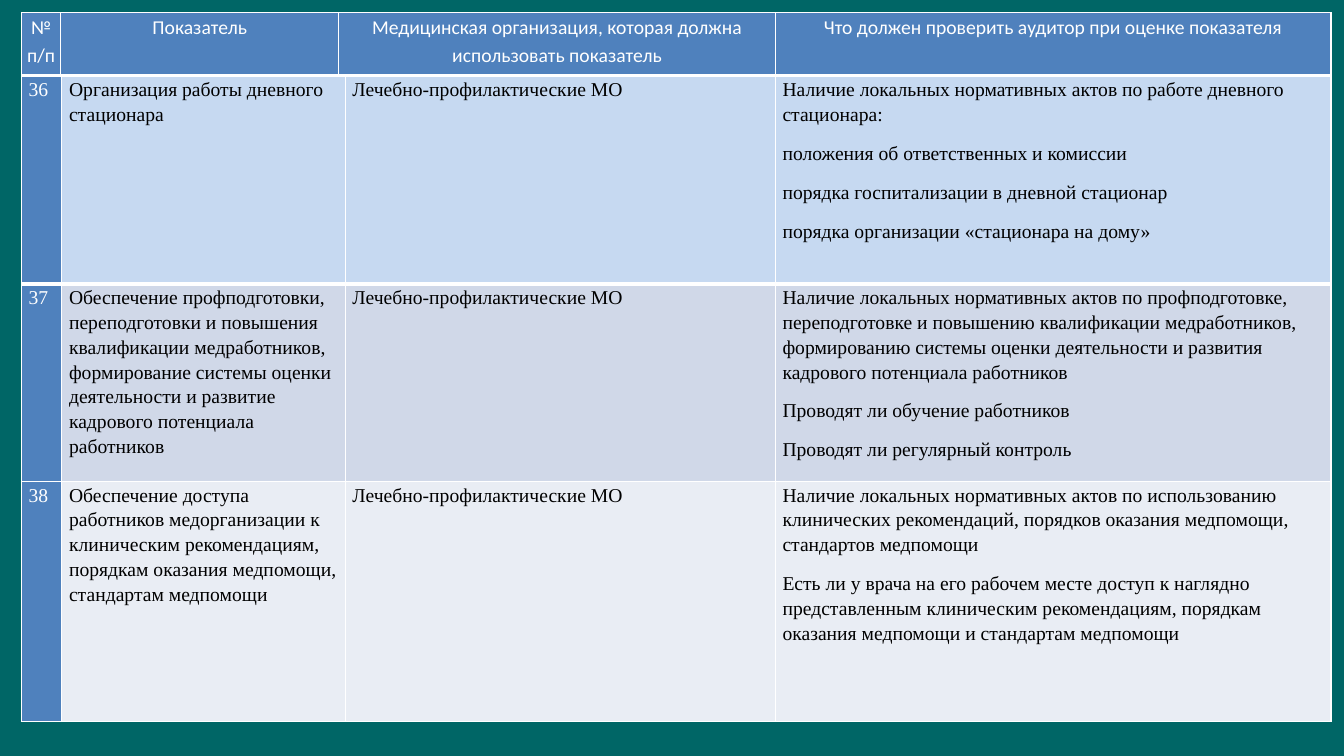
from dataclasses import dataclass

from lxml import etree
from pptx import Presentation
from pptx import util as u
from pptx.dml.color import RGBColor
from pptx.enum import text
from pptx.oxml.ns import qn


@dataclass(frozen=True)
class Theme:
    back: str = "006666"
    head: str = "4F81BD"
    light: str = "FFFFFF"
    dark: str = "000000"
    bands: tuple = ("C6D9F1", "D0D8E8", "E9EDF4")
    sans: str = "Calibri"
    serif: str = "Times New Roman"
    size: int = 14
    thin: int = 1
    thick: int = 3


THEME = Theme()
CLINIC = "Лечебно-профилактические МО"
HEADS = (
    "№ п/п",
    "Показатель",
    "Медицинская организация, которая должна использовать показатель",
    "Что должен проверить аудитор при оценке показателя",
)
ITEMS = (
    (
        "36",
        "Организация работы дневного стационара",
        CLINIC,
        "Наличие локальных нормативных актов по работе дневного стационара:\n"
        "положения об ответственных и комиссии\n"
        "порядка госпитализации в дневной стационар\n"
        "порядка организации «стационара на дому»",
    ),
    (
        "37",
        "Обеспечение профподготовки, переподготовки и повышения квалификации "
        "медработников, формирование системы оценки деятельности и развитие "
        "кадрового потенциала работников",
        CLINIC,
        "Наличие локальных нормативных актов по профподготовке, переподготовке "
        "и повышению квалификации медработников, формированию системы оценки "
        "деятельности и развития кадрового потенциала работников\n"
        "Проводят ли обучение работников\n"
        "Проводят ли регулярный контроль",
    ),
    (
        "38",
        "Обеспечение доступа работников медорганизации к клиническим "
        "рекомендациям, порядкам оказания медпомощи, стандартам медпомощи",
        CLINIC,
        "Наличие локальных нормативных актов по использованию клинических "
        "рекомендаций, порядков оказания медпомощи, стандартов медпомощи\n"
        "Есть ли у врача на его рабочем месте доступ к наглядно представленным "
        "клиническим рекомендациям, порядкам оказания медпомощи и стандартам "
        "медпомощи",
    ),
)


def edge(cell, base):
    props = cell._tc.get_or_add_tcPr()
    for side in ("lnL", "lnR", "lnT", "lnB"):
        width = base if side == "lnB" else THEME.thin
        line = etree.SubElement(props, qn(f"a:{side}"), w=str(u.Pt(width)))
        fill = etree.SubElement(line, qn("a:solidFill"))
        etree.SubElement(fill, qn("a:srgbClr"), val=THEME.light)


def fill_cell(cell, words, face, ink, fill, pad, align, base):
    edge(cell, base)
    cell.fill.solid()
    cell.fill.fore_color.rgb = RGBColor.from_string(fill)
    cell.margin_left = cell.margin_right = u.Cm(pad)
    cell.margin_top = cell.margin_bottom = 0
    cell.text_frame.text = words
    for para in cell.text_frame.paragraphs:
        para.alignment = align
        para.line_spacing = 1.15
        para.space_after = u.Pt(10)
        for run in para.runs:
            run.font.name = face
            run.font.size = u.Pt(THEME.size)
            run.font.color.rgb = RGBColor.from_string(ink)


def add_grid(slide, left, top, cols, rows):
    box = (u.Cm(n) for n in (left, top, sum(cols), sum(rows)))
    table = slide.shapes.add_table(len(rows), len(cols), *box).table
    table.first_row = table.horz_banding = False
    for col, width in zip(table.columns, cols):
        col.width = u.Cm(width)
    for row, height in zip(table.rows, rows):
        row.height = u.Cm(height)
    return table


def add_head(slide, left, top, height):
    table = add_grid(slide, left, top, (0.99, 7.01, 11, 14), (height,))
    for cell, words in zip(table.rows[0].cells, HEADS):
        fill_cell(cell, words, THEME.sans, THEME.light, THEME.head, 0.08,
                  text.PP_ALIGN.CENTER, THEME.thick)


def add_body(slide, left, top, rows):
    table = add_grid(slide, left, top, (1.02, 7.14, 10.84, 14), rows)
    for i, (row, item, band) in enumerate(zip(table.rows, ITEMS, THEME.bands)):
        base = THEME.thin if i else THEME.thick
        for j, (cell, words) in enumerate(zip(row.cells, item)):
            ink, fill = (THEME.dark, band) if j else (THEME.light, THEME.head)
            fill_cell(cell, words, THEME.serif, ink, fill, 0.18,
                      text.PP_ALIGN.LEFT, base)


def main():
    deck = Presentation()
    deck.slide_width, deck.slide_height = u.Cm(33.87), u.Cm(19.05)
    slide = deck.slides.add_slide(deck.slide_layouts[6])
    slide.background.fill.solid()
    slide.background.fill.fore_color.rgb = RGBColor.from_string(THEME.back)
    left, top, height = 0.54, 0.32, 1.6
    add_head(slide, left, top, height)
    add_body(slide, left, top + height, (5.23, 4.98, 6.05))
    deck.save("out.pptx")


if __name__ == "__main__":
    main()
